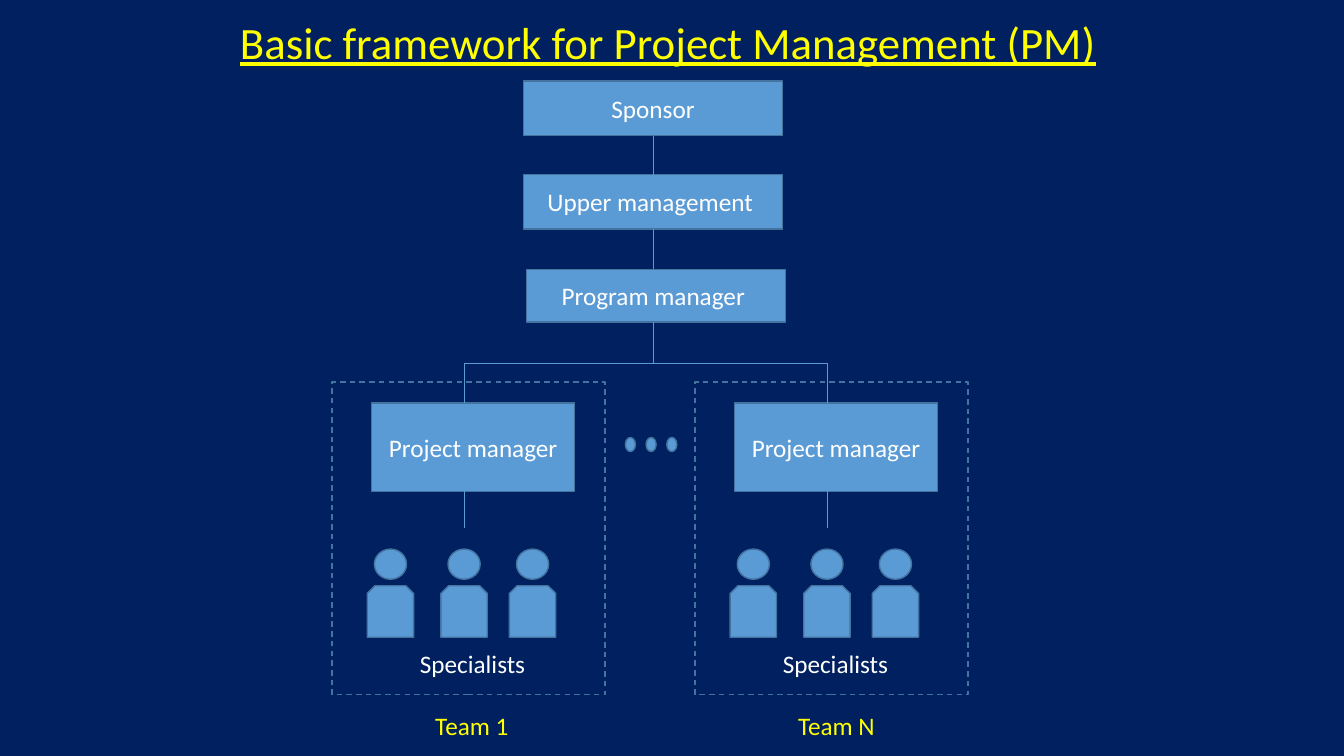
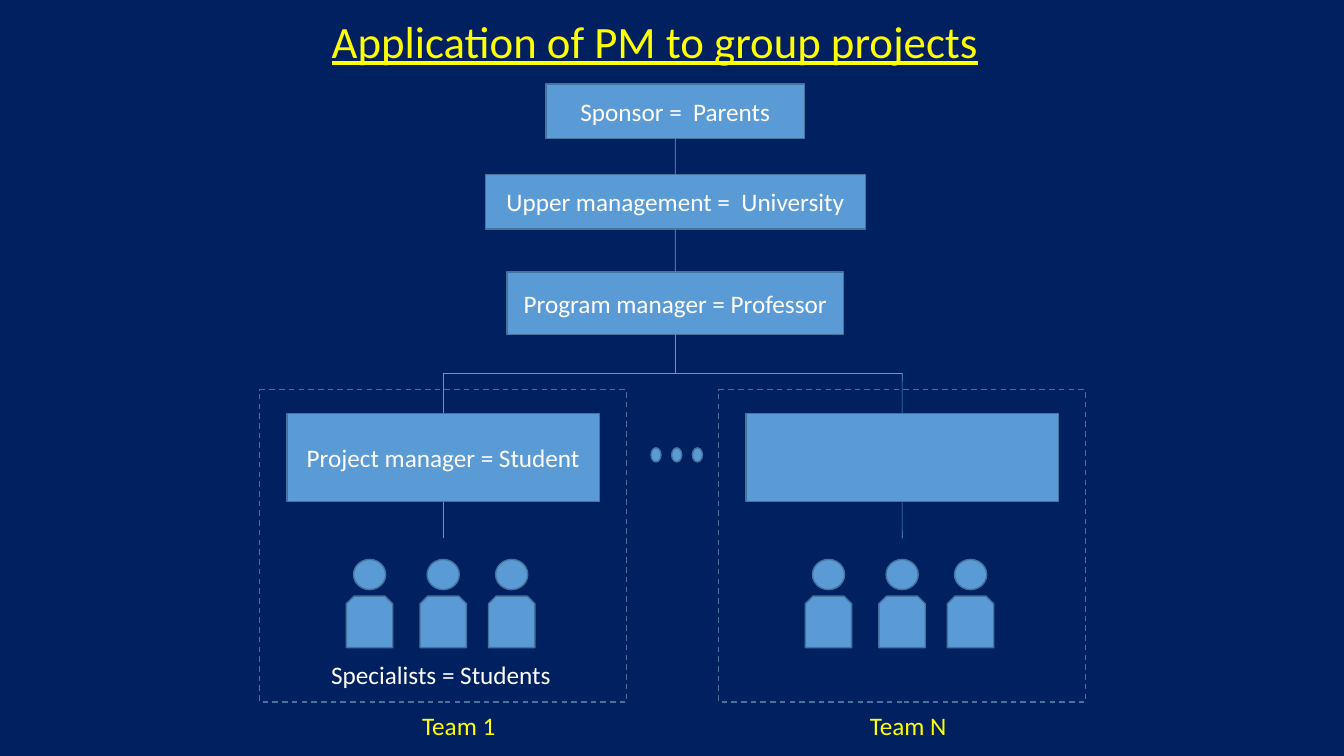
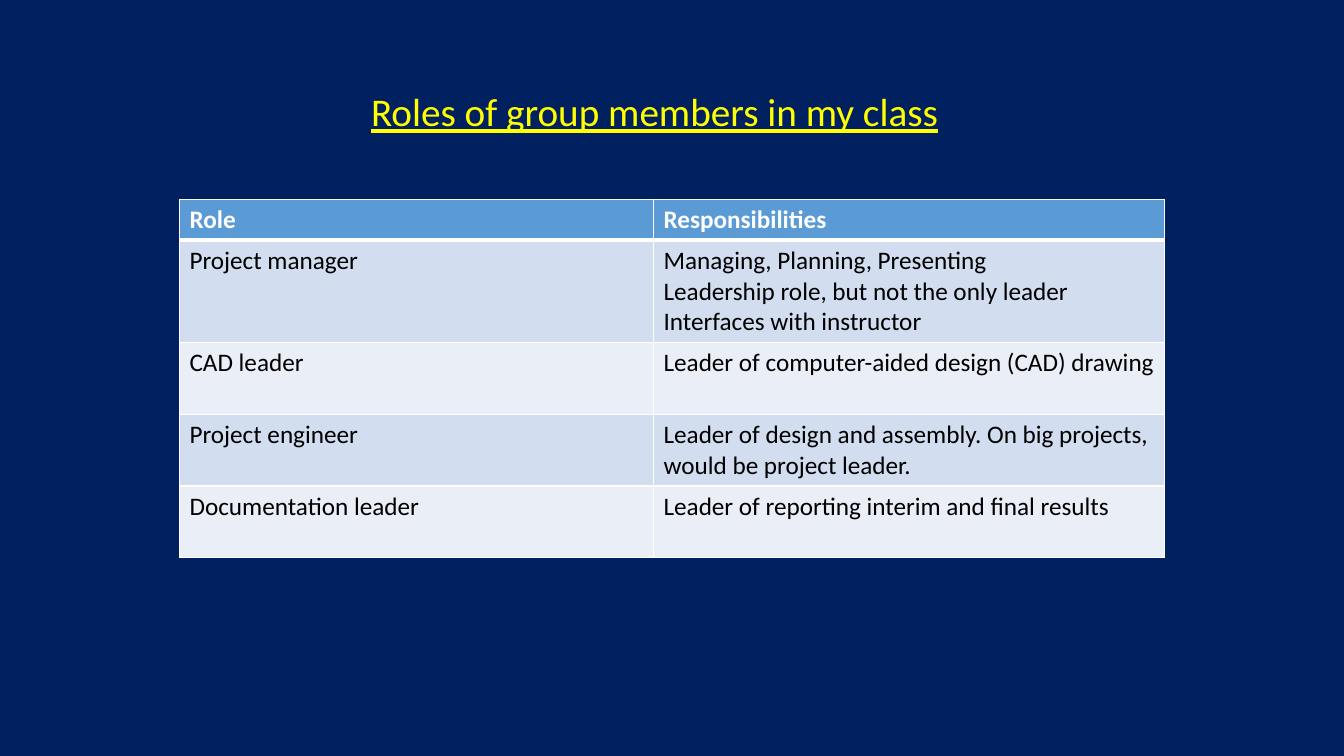
from pptx import Presentation
from pptx.dml.color import RGBColor
from pptx.enum.dml import MSO_LINE
from pptx.enum.shapes import MSO_CONNECTOR, MSO_SHAPE
from pptx.enum.text import MSO_ANCHOR, MSO_AUTO_SIZE, PP_ALIGN
from pptx.oxml import parse_xml
from pptx.oxml.ns import nsdecls
from pptx.util import Pt

NAVY = RGBColor(0x00, 0x20, 0x60)
BLUE = RGBColor(0x5B, 0x9B, 0xD5)
OUTLINE = RGBColor(0x43, 0x73, 0x9E)
YELLOW = RGBColor(0xFF, 0xFF, 0x00)
WHITE = RGBColor(0xFF, 0xFF, 0xFF)
BLACK = RGBColor(0x00, 0x00, 0x00)
BAND_DARK = RGBColor(0xD2, 0xDE, 0xEF)
BAND_LIGHT = RGBColor(0xEA, 0xEF, 0xF7)
FONT = "Calibri"

RECTANGLE = MSO_SHAPE.RECTANGLE
ELLIPSE = MSO_SHAPE.OVAL
BODY = MSO_SHAPE.SNIP_2_SAME_RECTANGLE
STRAIGHT = MSO_CONNECTOR.STRAIGHT
DASH = MSO_LINE.DASH
LEFT = PP_ALIGN.LEFT
CENTER = PP_ALIGN.CENTER
MIDDLE = MSO_ANCHOR.MIDDLE
NO_FIT = MSO_AUTO_SIZE.NONE
TOP_SIDE, BOTTOM_SIDE = 0, 2

PERSON_OFFSETS = (-52.6, 0, 48.9)
DOT_STEP = 14.8


def add_box(slide, preset, center, top, width, height, text=""):
    shape = slide.shapes.add_shape(
        preset, Pt(center - width / 2), Pt(top), Pt(width), Pt(height))
    shape.shadow.inherit = False
    shape.fill.solid()
    shape.fill.fore_color.rgb = BLUE
    shape.line.color.rgb = OUTLINE
    shape.line.width = Pt(1)
    if text:
        shape.text_frame.text = text
        shape.text_frame.vertical_anchor = MIDDLE
        paragraph = shape.text_frame.paragraphs[0]
        paragraph.alignment = CENTER
        font = paragraph.runs[0].font
        font.name, font.size, font.color.rgb = FONT, Pt(18), WHITE
    return shape


def add_line(slide, start, end, upper=None, lower=None):
    line = slide.shapes.add_connector(
        STRAIGHT, Pt(start[0]), Pt(start[1]), Pt(end[0]), Pt(end[1]))
    if upper is not None:
        line.begin_connect(upper, BOTTOM_SIDE)
    if lower is not None:
        line.end_connect(lower, TOP_SIDE)
    line.line.color.rgb = BLUE
    line.line.width = Pt(0.5)
    line._element.spPr.append(parse_xml(f"<a:effectLst {nsdecls('a')}/>"))


presentation = Presentation()
presentation.slide_width = Pt(960)
presentation.slide_height = Pt(540)
background = presentation.slide_master.background.fill
background.solid()
background.fore_color.rgb = NAVY

titles = [
    ("Basic framework for Project Management (PM)", 32, 164.2, 6.5, 631.4, 46),
    ("Application of PM to group projects", 32, 229.7, 6, 496, 46),
    ("Roles of group members in my class", 28, 257.8, 59, 424, 41),
]
for text, size, left, top, width, height in titles:
    slide = presentation.slides.add_slide(presentation.slide_layouts[5])
    title = slide.shapes.title
    title.left, title.top = Pt(left), Pt(top)
    title.width, title.height = Pt(width), Pt(height)
    text_frame = title.text_frame
    text_frame.text = text
    text_frame.auto_size = NO_FIT
    text_frame.word_wrap = False
    text_frame.vertical_anchor = MIDDLE
    text_frame.paragraphs[0].alignment = LEFT
    font = text_frame.paragraphs[0].runs[0].font
    font.name, font.size, font.underline = FONT, Pt(size), True
    font.color.rgb = YELLOW

diagrams = [
    {
        "trunk": 466.5,
        "bus": 259.2,
        "chain": [
            ("Sponsor", 466.5, 58, 185, 38.9),
            ("Upper management ", 466.5, 124.8, 185, 38.9),
            ("Program manager ", 468.7, 192.5, 185, 37.6),
        ],
        "dots": 465.1,
        "manager": (6.5, 145),
        "frame": (3.2, 273, 195.1),
        "specialists": (-38.6, 90.7),
        "teams": [
            (331.5, "Project manager", "Specialists", "Team 1", 303.8),
            (590.7, "Project manager", "Specialists", "Team N", 563),
        ],
    },
    {
        "trunk": 482.4,
        "bus": 266.6,
        "chain": [
            ("Sponsor =  Parents", 482.4, 60, 185, 38.9),
            ("Upper management =  University", 482.4, 124.8, 271.4, 38.9),
            ("Program manager = Professor", 482.4, 194.4, 240.5, 44.4),
        ],
        "dots": 483.4,
        "manager": (0, 223.2),
        "frame": (0, 278.3, 262.1),
        "specialists": (-87.1, 172.8),
        "teams": [
            (316.6, "Project manager = Student", "Specialists = Students",
             "Team 1", 294.5),
            (644.4, "", "", "Team N", 614.2),
        ],
    },
]

for slide, diagram in zip(presentation.slides, diagrams):
    trunk, bus = diagram["trunk"], diagram["bus"]
    previous, previous_bottom = None, 0
    for text, center, top, width, height in diagram["chain"]:
        box = add_box(slide, RECTANGLE, center, top, width, height, text)
        joint = box if center == trunk else None
        if previous_bottom:
            add_line(slide, (trunk, previous_bottom), (trunk, top), previous, joint)
        previous, previous_bottom = joint, top + height
    add_line(slide, (trunk, previous_bottom), (trunk, bus), previous)

    first_stem, last_stem = [team[0] for team in diagram["teams"]]
    add_line(slide, (first_stem, bus), (last_stem, bus))
    for step in (-1, 0, 1):
        add_box(slide, ELLIPSE, diagram["dots"] + step * DOT_STEP, bus + 53.3, 7.2, 10.1)

    manager_shift, manager_width = diagram["manager"]
    frame_shift, frame_top, frame_width = diagram["frame"]
    specialists_shift, specialists_width = diagram["specialists"]
    for stem, manager_text, specialists_text, team_text, team_left in diagram["teams"]:
        manager = add_box(slide, RECTANGLE, stem + manager_shift, bus + 28.6,
                          manager_width, 63.2, manager_text)
        joint = None if manager_shift else manager
        add_line(slide, (stem, bus), (stem, bus + 28.6), None, joint)
        add_line(slide, (stem, bus + 91.8), (stem, bus + 118), joint)

        for offset in PERSON_OFFSETS:
            add_box(slide, BODY, stem + offset, bus + 159.2, 33.1, 36.8)
            add_box(slide, ELLIPSE, stem + offset, bus + 133, 23, 21.6)

        frame = add_box(slide, RECTANGLE, stem + frame_shift, frame_top, frame_width, 223.2)
        frame.fill.background()
        frame.line.dash_style = DASH

        labels = [
            (specialists_text, stem + specialists_shift, bus + 200.6,
             specialists_width, WHITE),
            (team_text, team_left, 504, 74, YELLOW),
        ]
        for text, left, top, width, color in labels:
            if not text:
                continue
            label = slide.shapes.add_textbox(Pt(left), Pt(top), Pt(width), Pt(29))
            label.text_frame.text = text
            label.text_frame.word_wrap = False
            font = label.text_frame.paragraphs[0].runs[0].font
            font.name, font.size, font.color.rgb = FONT, Pt(18), color

roles = [
    ("Role", "Responsibilities"),
    ("Project manager",
     "Managing, Planning, Presenting\n"
     "Leadership role, but not the only leader\n"
     "Interfaces with instructor"),
    ("CAD leader", "Leader of computer-aided design (CAD) drawing"),
    ("Project engineer",
     "Leader of design and assembly. On big projects, would be project leader."),
    ("Documentation leader", "Leader of reporting interim and final results"),
]
row_heights = (29.2, 72, 51.2, 51.2, 51.2)
column_widths = (338.6, 365)
table = presentation.slides[2].shapes.add_table(
    len(roles), len(column_widths), Pt(128.2), Pt(142.4),
    Pt(sum(column_widths)), Pt(sum(row_heights))).table
for column, width in zip(table.columns, column_widths):
    column.width = Pt(width)

for row_index, (row, height) in enumerate(zip(table.rows, row_heights)):
    row.height = Pt(height)
    is_header = row_index == 0
    fill_color = BLUE if is_header else BAND_DARK if row_index % 2 else BAND_LIGHT
    border_widths = {
        "lnL": 1,
        "lnR": 1,
        "lnT": 3 if row_index == 1 else 1,
        "lnB": 3 if is_header else 1,
    }
    for cell, text in zip(row.cells, roles[row_index]):
        cell.text_frame.text = text
        for paragraph in cell.text_frame.paragraphs:
            font = paragraph.runs[0].font
            font.name, font.size, font.bold = FONT, Pt(18), is_header
            font.color.rgb = WHITE if is_header else BLACK
        properties = cell._tc.get_or_add_tcPr()
        for tag, width in border_widths.items():
            properties.append(parse_xml(
                f'<a:{tag} {nsdecls("a")} w="{Pt(width)}"><a:solidFill>'
                f'<a:srgbClr val="{WHITE}"/></a:solidFill></a:{tag}>'))
        cell.fill.solid()
        cell.fill.fore_color.rgb = fill_color

presentation.save("out.pptx")
